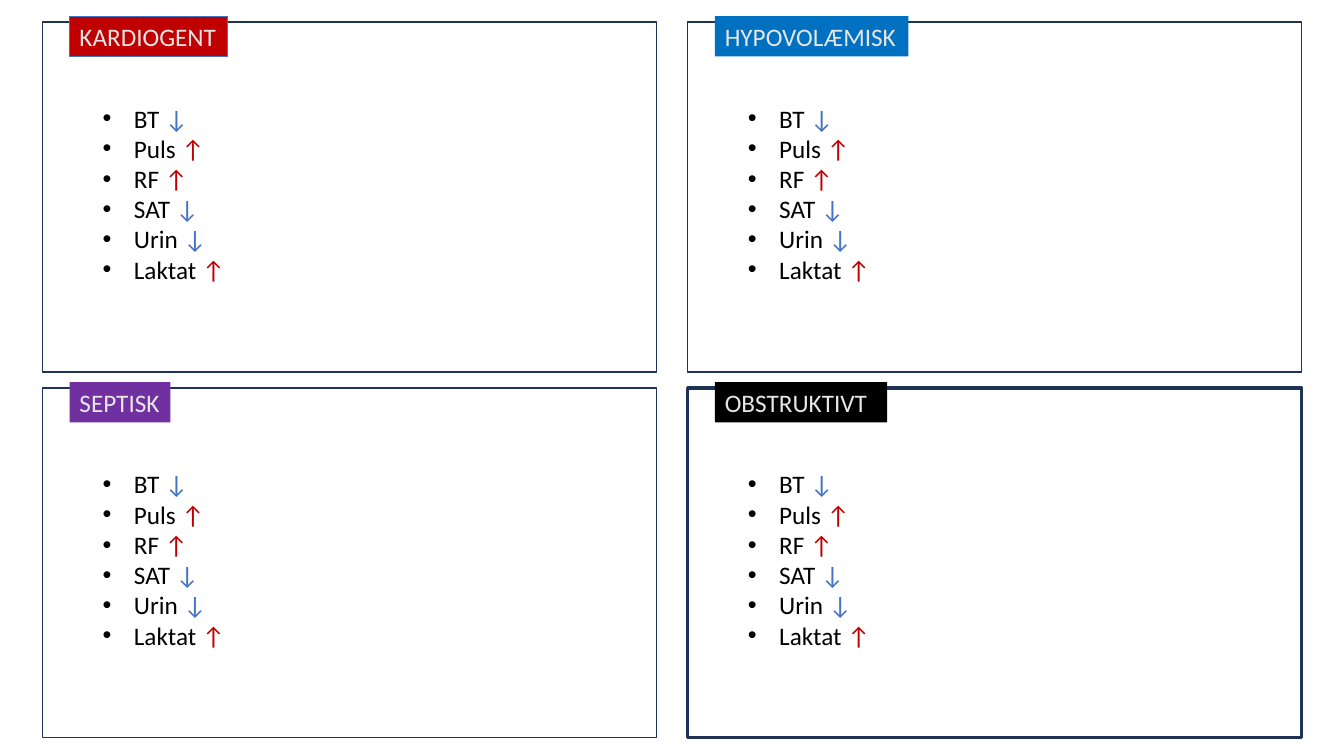
"""Builds a slide comparing clinical signs in four types of shock."""
from lxml import etree
from pptx import Presentation, util as u
from pptx.dml.color import RGBColor
from pptx.enum import shapes, text
from pptx.oxml.ns import qn

FONT, SIZE = "Calibri", 18
NAVY, BLUE, RED, BLACK, PALE = "1E3256", "4472C4", "C00000", "000000", "E7E6E6"

# name, column, row, label width, label fill, label line, label wraps, frame weight
SHOCKS = [
    ("KARDIOGENT", 0, 0, 1.57, RED, BLUE, False, 1),
    ("HYPOVOLÆMISK", 1, 0, 1.92, "0070C0", None, False, 1),
    ("SEPTISK", 0, 1, 1.0, "7030A0", None, False, 1),
    ("OBSTRUKTIVT", 1, 1, 1.71, BLACK, None, True, 2.25),
]
SIGNS = [("BT", "↓"), ("Puls", "↑"), ("RF", "↑"),
         ("SAT", "↓"), ("Urin", "↓"), ("Laktat", "↑")]
ARROW_COLORS = {"↓": BLUE, "↑": RED}

LEFT, TOP = 0.42, 0.22
COLUMN_STEP, ROW_STEP = 6.4, 3.63
FRAME_WIDTH, FRAME_HEIGHT = 6.09, 3.47


def color(value):
    return RGBColor.from_string(value)


def add_box(slide, left, top, width, height, fill=None, line=None, weight=0.75):
    box = slide.shapes.add_shape(
        shapes.MSO_SHAPE.RECTANGLE, *map(u.Inches, (left, top, width, height)))
    box.shadow.inherit = False
    if fill:
        box.fill.solid()
        box.fill.fore_color.rgb = color(fill)
    else:
        box.fill.background()
    if line:
        box.line.color.rgb = color(line)
        box.line.width = u.Pt(weight)
    else:
        box.line.fill.background()
    return box


def add_text(para, words, ink=BLACK, size=SIZE, font=FONT):
    span = para.add_run()
    span.text = words
    span.font.name = font
    span.font.size = u.Pt(size)
    span.font.color.rgb = color(ink)


def add_label(slide, name, left, top, width, fill, line, wrap):
    label = add_box(slide, left, top, width, 0.4, fill=fill, line=line)
    frame = label.text_frame
    frame.word_wrap = wrap
    frame.vertical_anchor = text.MSO_ANCHOR.TOP
    para = frame.paragraphs[0]
    para.alignment = text.PP_ALIGN.LEFT
    add_text(para, name, ink=PALE)


def add_signs(slide, left, top):
    box = slide.shapes.add_textbox(
        *map(u.Inches, (left, top, FRAME_WIDTH, 2.22)))
    frame = box.text_frame
    frame.word_wrap = True
    frame.margin_top = u.Inches(0.35)
    for index, (sign, arrow) in enumerate(SIGNS):
        para = frame.add_paragraph() if index else frame.paragraphs[0]
        para.level = 1
        props = para._p.get_or_add_pPr()
        props.set("marL", str(u.Inches(0.81)))
        props.set("indent", str(u.Inches(-0.31)))
        etree.SubElement(props, qn("a:buFont")).set("typeface", "Arial")
        etree.SubElement(props, qn("a:buChar")).set("char", "•")
        add_text(para, sign + " ")
        add_text(para, arrow, ink=ARROW_COLORS[arrow])


def main():
    deck = Presentation()
    deck.slide_width, deck.slide_height = u.Inches(13.33), u.Inches(7.5)
    page = deck.slides.add_slide(deck.slide_layouts[6])
    for name, column, row, width, fill, line, wrap, weight in SHOCKS:
        left = LEFT + column * COLUMN_STEP
        top = TOP + row * ROW_STEP
        add_box(page, left, top, FRAME_WIDTH, FRAME_HEIGHT, line=NAVY, weight=weight)
        add_label(page, name, left + 0.27, top - 0.06, width, fill, line, wrap)
        add_signs(page, left, top + 0.45)
    deck.save("out.pptx")


if __name__ == "__main__":
    main()
